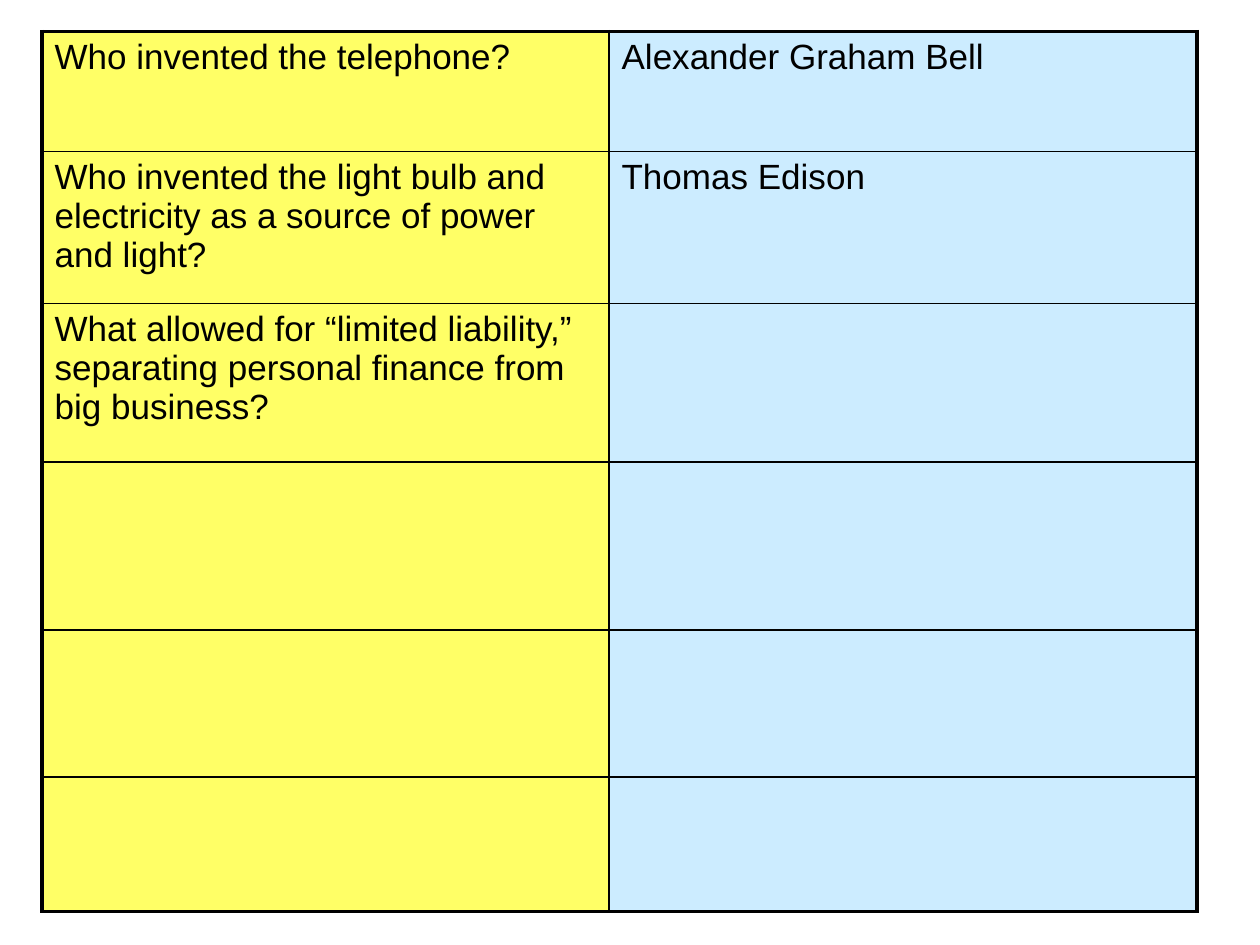
from lxml import etree
from pptx import Presentation
from pptx.dml.color import RGBColor
from pptx.oxml.ns import qn
from pptx.util import Pt

YELLOW = RGBColor(0xFF, 0xFF, 0x66)
BLUE = RGBColor(0xCC, 0xEC, 0xFF)
BLACK = RGBColor(0, 0, 0)
THIN, THICK = Pt(1), Pt(2.25)

COL_WIDTHS = [324, 336]
ROW_HEIGHTS = [68.5, 87, 90.5, 96, 84, 77]
QUESTIONS = [
    ("Who invented the telephone?", "Alexander Graham Bell"),
    ("Who invented the light bulb and electricity as a source of power and light?",
     "Thomas Edison"),
    ("What allowed for “limited liability,” separating personal finance from big business?",
     ""),
    ("", ""),
    ("", ""),
    ("", ""),
]


def add_border(cell, side, width):
    ln = etree.SubElement(cell._tc.get_or_add_tcPr(), qn(f"a:ln{side}"), w=str(width))
    fill = etree.SubElement(ln, qn("a:solidFill"))
    etree.SubElement(fill, qn("a:srgbClr"), val=str(BLACK))


prs = Presentation()
prs.slide_width, prs.slide_height = Pt(720), Pt(540)
s = prs.slides.add_slide(prs.slide_layouts[6])

n_rows, n_cols = len(ROW_HEIGHTS), len(COL_WIDTHS)
table = s.shapes.add_table(n_rows, n_cols, Pt(24), Pt(18),
                           Pt(sum(COL_WIDTHS)), Pt(sum(ROW_HEIGHTS))).table
table.first_row = False
table.horz_banding = False
for col, width in zip(table.columns, COL_WIDTHS):
    col.width = Pt(width)

for i, texts in enumerate(QUESTIONS):
    table.rows[i].height = Pt(ROW_HEIGHTS[i])
    for j, text in enumerate(texts):
        cell = table.cell(i, j)
        outer = {"L": j == 0, "R": j == n_cols - 1, "T": i == 0, "B": i == n_rows - 1}
        for side, is_outer in outer.items():
            add_border(cell, side, THICK if is_outer else THIN)
        cell.fill.solid()
        cell.fill.fore_color.rgb = (YELLOW, BLUE)[j]
        cell.text = text
        p = cell.text_frame.paragraphs[0]
        p.font.name = "Arial"
        p.font.size = Pt(20)
        p.font.color.rgb = BLACK

prs.save("out.pptx")
